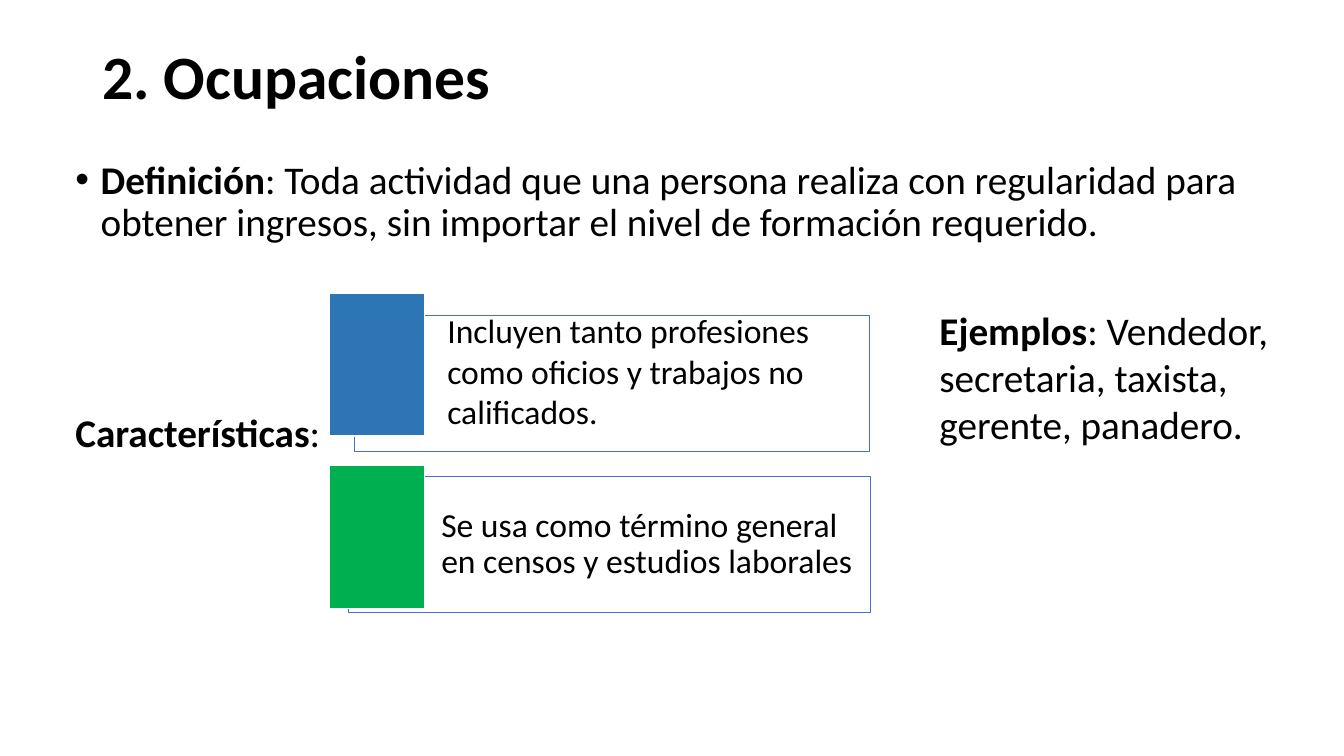
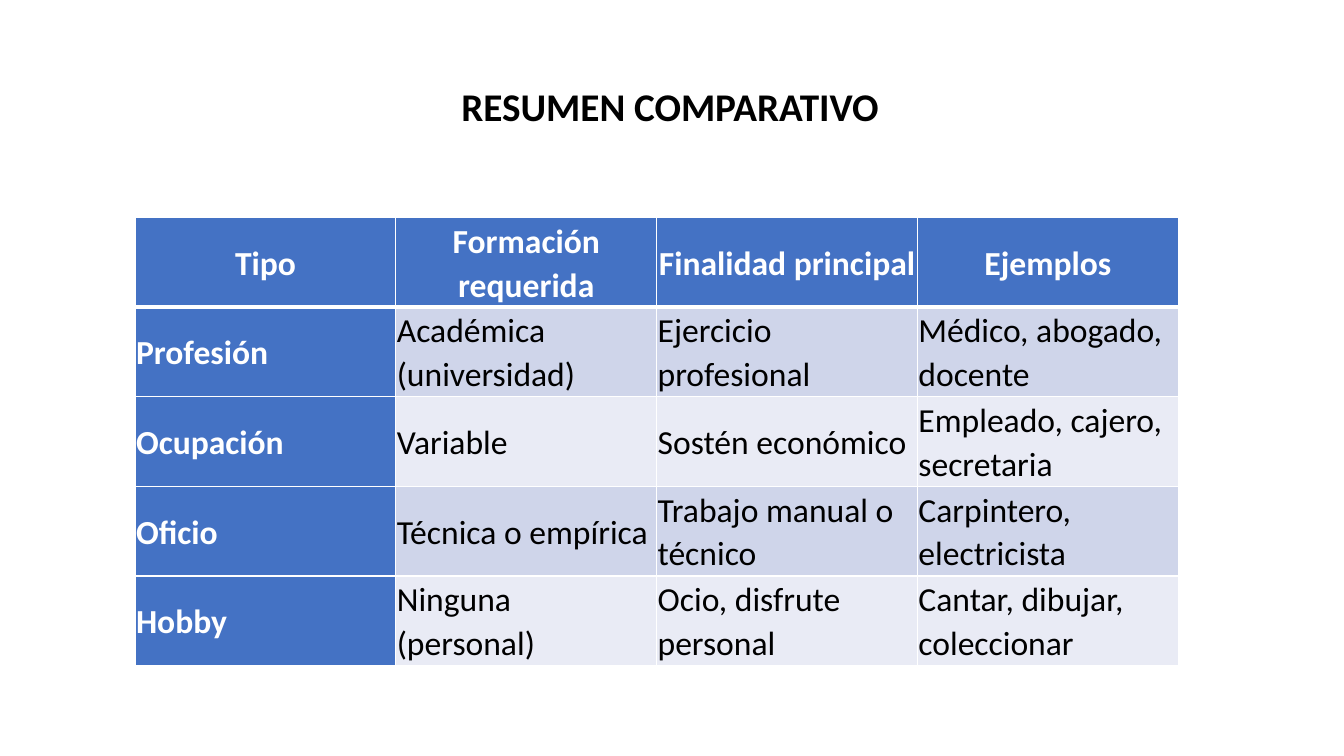
from lxml.etree import SubElement as Sub
from pptx import Presentation
from pptx.dml.color import RGBColor as RGB
from pptx.enum.shapes import MSO_SHAPE as Shape
from pptx.enum.text import MSO_ANCHOR as Anchor, PP_ALIGN as Align
from pptx.oxml.ns import qn
from pptx.util import Pt

FONT = "Calibri"
HUE = {
    "ink": "000000", "white": "FFFFFF", "head": "4472C4", "blue": "2E75B6",
    "green": "00B050", "odd": "CFD5EA", "even": "E9EBF5",
}
WIDE, HIGH = 960, 540


def tone(name):
    return RGB.from_string(HUE[name])


def write(frame, text, lead="", size=28, hue="ink", bold=False, space=1.0,
          align=Align.LEFT, anchor=Anchor.TOP, pads=(7.2, 3.6, 7.2, 3.6),
          bullet=False):
    """Fill a frame with one paragraph; lead is its bold opening."""
    frame.word_wrap = True
    frame.vertical_anchor = anchor
    sides = ("margin_left", "margin_top", "margin_right", "margin_bottom")
    for side, pad in zip(sides, pads):
        setattr(frame, side, Pt(pad))
    para = frame.paragraphs[0]
    if bullet:
        props = para._p.get_or_add_pPr()
        props.set("marL", str(Pt(18)))
        props.set("indent", str(-Pt(18)))
        Sub(props, qn("a:buFont"), typeface="Arial")
        Sub(props, qn("a:buChar"), char="•")
    para.alignment = align
    para.line_spacing = space
    for part, strong in ((lead, True), (text, bold)):
        if part:
            run = para.add_run()
            run.text = part
            font = run.font
            font.name, font.size, font.bold = FONT, Pt(size), strong
            font.color.rgb = tone(hue)


def label(slide, box, text, **style):
    write(slide.shapes.add_textbox(*map(Pt, box)).text_frame, text, **style)


def block(slide, box, fill, line, width):
    shape = slide.shapes.add_shape(Shape.RECTANGLE, *map(Pt, box))
    shape.shadow.inherit = False
    shape.fill.solid()
    shape.fill.fore_color.rgb = tone(fill)
    shape.line.color.rgb = tone(line)
    shape.line.width = Pt(width)
    return shape


def card(slide, box, text, hue, shift, **style):
    """Outlined text card with a colour block over its left edge."""
    left, top, width, height = box
    panel = block(slide, box, "white", "head", 0.5)
    write(panel.text_frame, text, size=24, anchor=Anchor.MIDDLE, **style)
    dx, dy = shift
    block(slide, (left - dx, top - dy, 68, 102), hue, "white", 1)


def edge(cell, side, width):
    line = Sub(cell._tc.get_or_add_tcPr(), qn("a:" + side), w=str(Pt(width)))
    fill = Sub(line, qn("a:solidFill"))
    Sub(fill, qn("a:srgbClr"), val=HUE["white"])


def grid(slide, box, rows):
    """Table with a coloured first row and first column."""
    left, top, width, height = box
    table = slide.shapes.add_table(len(rows), len(rows[0]), *map(Pt, box)).table
    for col in table.columns:
        col.width = Pt(width / len(rows[0]))
    for r, row in enumerate(rows):
        table.rows[r].height = Pt(height / len(rows))
        for c, text in enumerate(row):
            cell = table.cell(r, c)
            key = r == 0 or c == 0
            write(cell.text_frame, text, size=24, bold=key, space=1.07,
                  hue="white" if key else "ink",
                  align=Align.LEFT if r else Align.CENTER)
            cell.vertical_anchor = Anchor.MIDDLE
            cell.margin_left = cell.margin_right = Pt(0.7)
            cell.margin_top = cell.margin_bottom = Pt(0.7)
            # Borders come before the fill in the cell properties
            for side in ("lnL", "lnR", "lnT", "lnB"):
                thick = (r, side) in ((0, "lnB"), (1, "lnT"))
                edge(cell, side, 3 if thick else 1)
            cell.fill.solid()
            band = "odd" if r % 2 else "even"
            cell.fill.fore_color.rgb = tone("head" if key else band)


def topic(slide):
    # Title and definition
    label(slide, (66, 29, 828, 56), "2. Ocupaciones", size=44, bold=True,
          space=0.9, anchor=Anchor.MIDDLE)
    label(slide, (46.8, 111, 847.2, 75),
          ": Toda actividad que una persona realiza con regularidad para "
          "obtener ingresos, sin importar el nivel de formación requerido.",
          lead="Definición", space=0.9, bullet=True)
    # Features
    label(slide, (46.8, 292, 200, 38), ":", lead="Características", space=0.9)
    card(slide, (253.4, 225.4, 368, 97),
         "Incluyen tanto profesiones como oficios y trabajos no calificados.",
         "blue", (18, 16), pads=(66.2, 0, 7.2, 18))
    card(slide, (249, 340.6, 373, 97),
         "Se usa como término general en censos y estudios laborales",
         "green", (13.6, 8), pads=(66.2, 7.2, 7.2, 7.2), space=0.9)
    # Examples
    label(slide, (664, 215.3, 271, 131),
          ": Vendedor, secretaria, taxista, gerente, panadero.",
          lead="Ejemplos")


def recap(slide):
    label(slide, (322.5, 55.4, 479, 41), "RESUMEN COMPARATIVO", bold=True)
    grid(slide, (96.5, 155.5, 745.2, 320), [
        ("Tipo", "Formación requerida", "Finalidad principal", "Ejemplos"),
        ("Profesión", "Académica (universidad)", "Ejercicio profesional",
         "Médico, abogado, docente"),
        ("Ocupación", "Variable", "Sostén económico",
         "Empleado, cajero, secretaria"),
        ("Oficio", "Técnica o empírica", "Trabajo manual o técnico",
         "Carpintero, electricista"),
        ("Hobby", "Ninguna (personal)", "Ocio, disfrute personal",
         "Cantar, dibujar, coleccionar"),
    ])


def main():
    deck = Presentation()
    deck.slide_width, deck.slide_height = Pt(WIDE), Pt(HIGH)
    for draw in (topic, recap):
        draw(deck.slides.add_slide(deck.slide_layouts[6]))
    deck.save("out.pptx")


if __name__ == "__main__":
    main()
